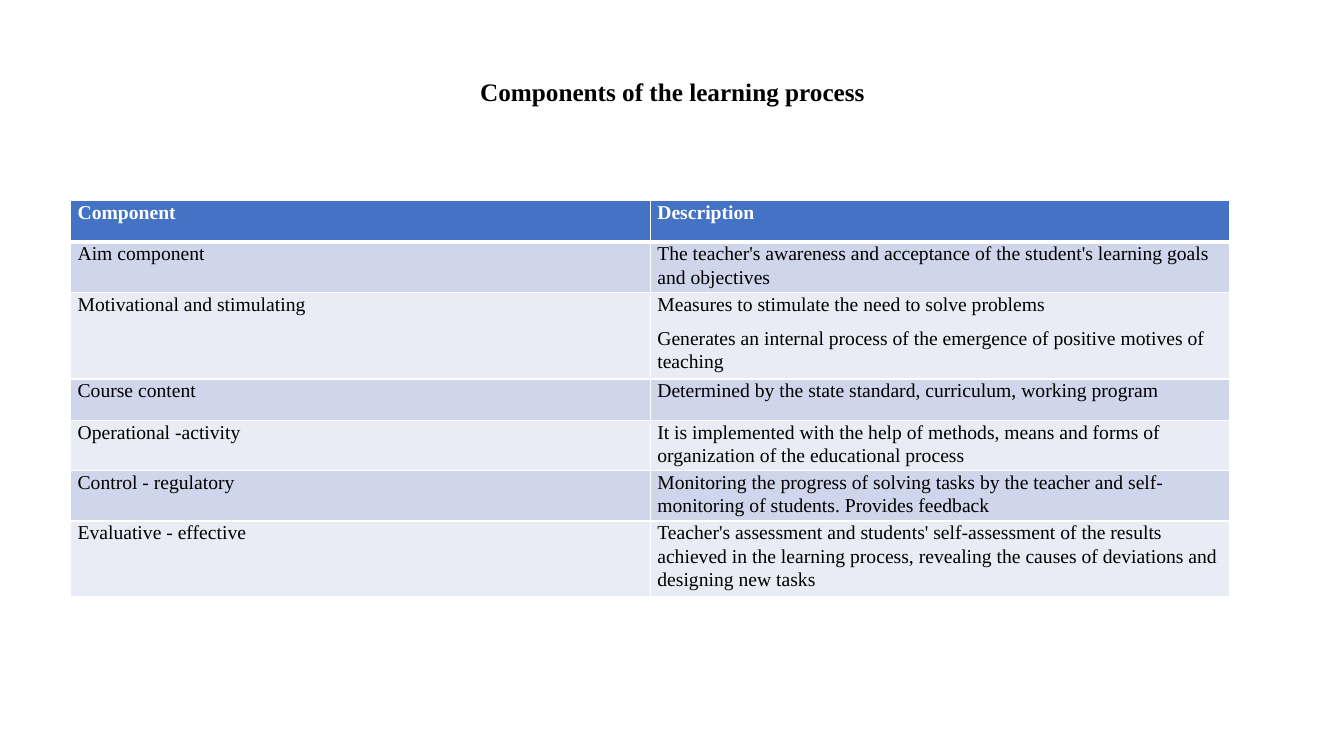
from lxml import etree
from pptx import Presentation
from pptx import util as u
from pptx.dml.color import RGBColor
from pptx.enum import text
from pptx.oxml.ns import qn

PX = 9144  # EMU, 100 px to the inch
BLACK = RGBColor(0x00, 0x00, 0x00)
WHITE = RGBColor(0xFF, 0xFF, 0xFF)
BLUE = RGBColor(0x44, 0x72, 0xC4)
BANDS = RGBColor(0xCF, 0xD5, 0xEA), RGBColor(0xE9, 0xEB, 0xF5)

ROWS = [
    ("Component", ["Description"]),
    ("Aim component", [
        "The teacher's awareness and acceptance of the student's learning goals and objectives"]),
    ("Motivational and stimulating", [
        "Measures to stimulate the need to solve problems",
        "Generates an internal process of the emergence of positive motives of teaching"]),
    ("Course content", ["Determined by the state standard, curriculum, working program"]),
    ("Operational -activity", [
        "It is implemented with the help of methods, means and forms of organization"
        " of the educational process"]),
    ("Control - regulatory", [
        "Monitoring the progress of solving tasks by the teacher and self-monitoring"
        " of students. Provides feedback"]),
    ("Evaluative - effective", [
        "Teacher's assessment and students' self-assessment of the results achieved in the"
        " learning process, revealing the causes of deviations and designing new tasks"]),
]


class Page:
    face = "Times New Roman"

    def __init__(self, slide):
        self.slide = slide

    def words(self, frame, lines, size, color, bold, space, after=0, align=None):
        for i, line in enumerate(lines):
            para = frame.add_paragraph() if i else frame.paragraphs[0]
            para.alignment = align
            para.line_spacing = space
            para.space_after = u.Pt(after)
            run = para.add_run()
            run.text = line
            font = run.font
            font.name, font.size, font.bold = self.face, u.Pt(size), bold
            font.color.rgb = color

    def title(self, line, x, y, w, h, foot):
        """Centre the line in the box, above a bottom margin of foot px."""
        frame = self.slide.shapes.add_textbox(x * PX, y * PX, w * PX, h * PX).text_frame
        frame.word_wrap = True
        frame.vertical_anchor = text.MSO_ANCHOR.MIDDLE
        frame.margin_bottom = foot * PX
        self.words(frame, [line], 18, BLACK, True, 0.9, align=text.PP_ALIGN.CENTER)

    def edge(self, cell, side, width):
        props = cell._tc.get_or_add_tcPr()
        line = etree.SubElement(props, qn(f"a:ln{side}"), w=str(u.Pt(width)))
        fill = etree.SubElement(line, qn("a:solidFill"))
        etree.SubElement(fill, qn("a:srgbClr"), val=str(WHITE))

    def cell(self, cell, lines, row):
        head = row == 0
        cell.margin_left = cell.margin_right = 7 * PX
        cell.margin_top = cell.margin_bottom = 0
        for side in "LRTB":
            thick = (side, row) in (("B", 0), ("T", 1))
            self.edge(cell, side, 3 if thick else 1)
        cell.fill.solid()
        cell.fill.fore_color.rgb = BLUE if head else BANDS[(row - 1) % 2]
        self.words(cell.text_frame, lines, 14, WHITE if head else BLACK, head, 1.07, 8)

    def table(self, rows, x, y, w, high):
        grid = self.slide.shapes.add_table(
            len(rows), 2, x * PX, y * PX, w * PX, high * len(rows) * PX).table
        for i, (name, lines) in enumerate(rows):
            grid.rows[i].height = high * PX
            self.cell(grid.cell(i, 0), [name], i)
            self.cell(grid.cell(i, 1), lines, i)


def main():
    deck = Presentation()
    deck.slide_width, deck.slide_height = 1333 * PX, 750 * PX
    page = Page(deck.slides.add_slide(deck.slide_layouts[6]))
    page.title("Components of the learning process", 92, 40, 1150, 145, 45)
    page.table(ROWS, 70, 199, 1150, 41)
    deck.save("out.pptx")


if __name__ == "__main__":
    main()
